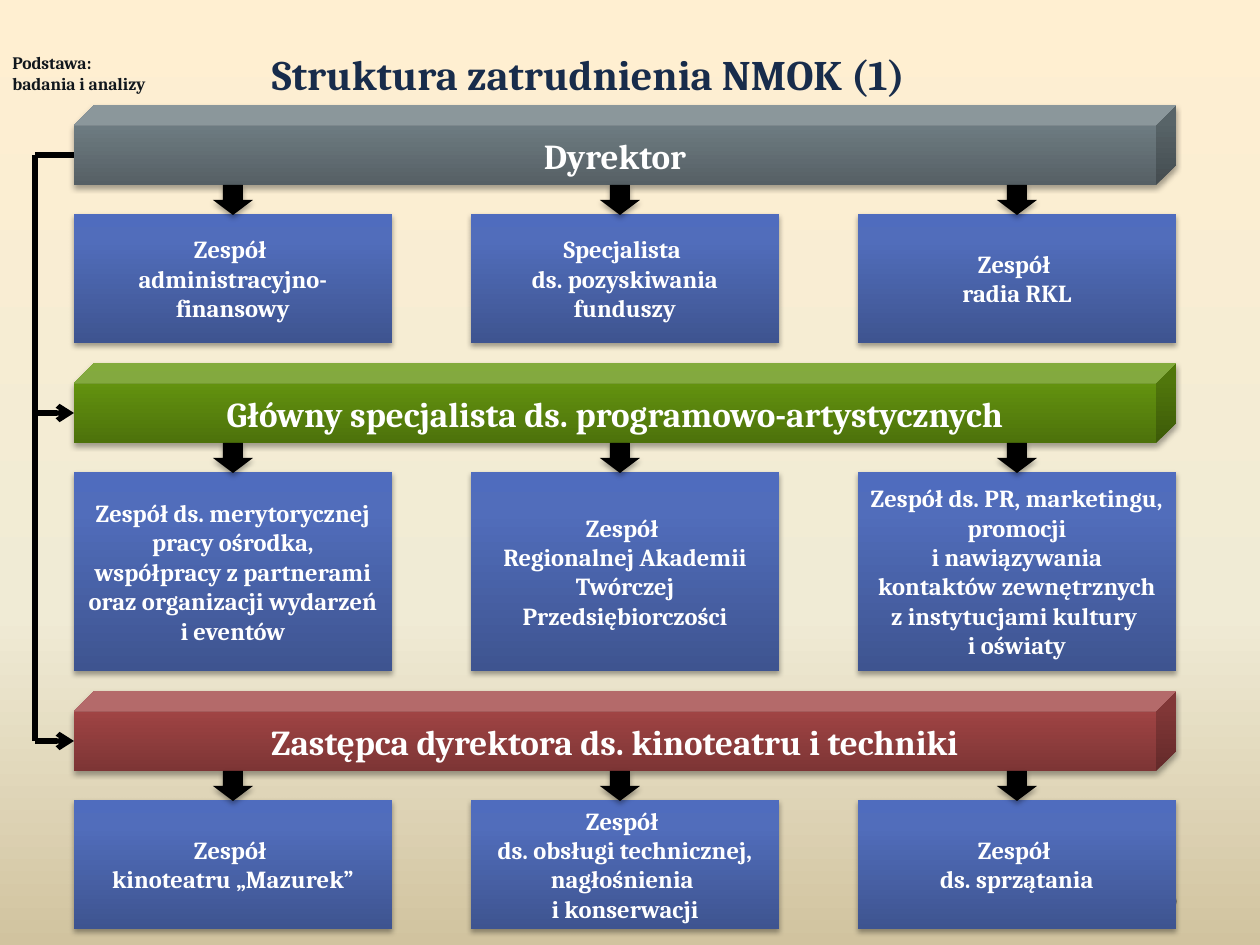
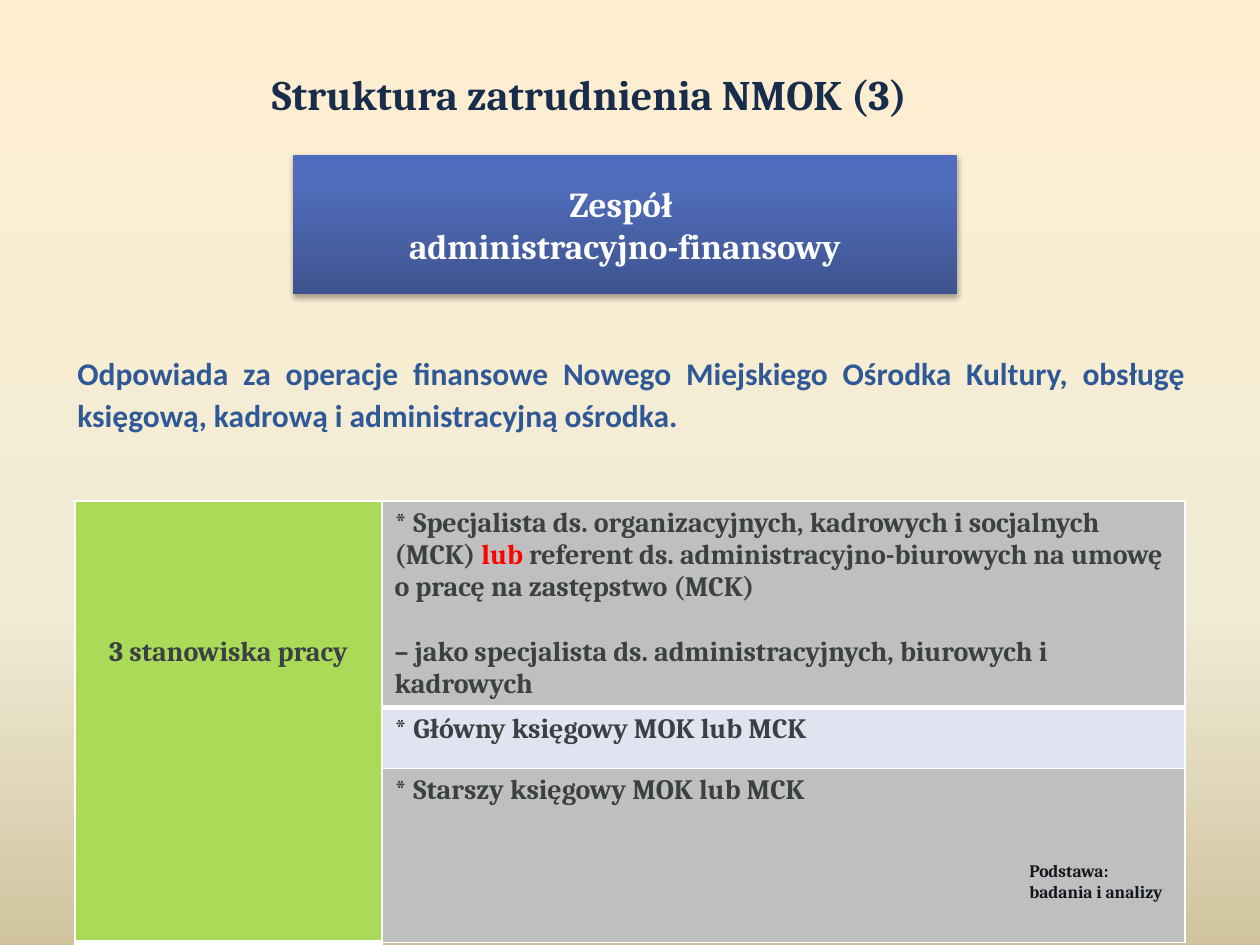
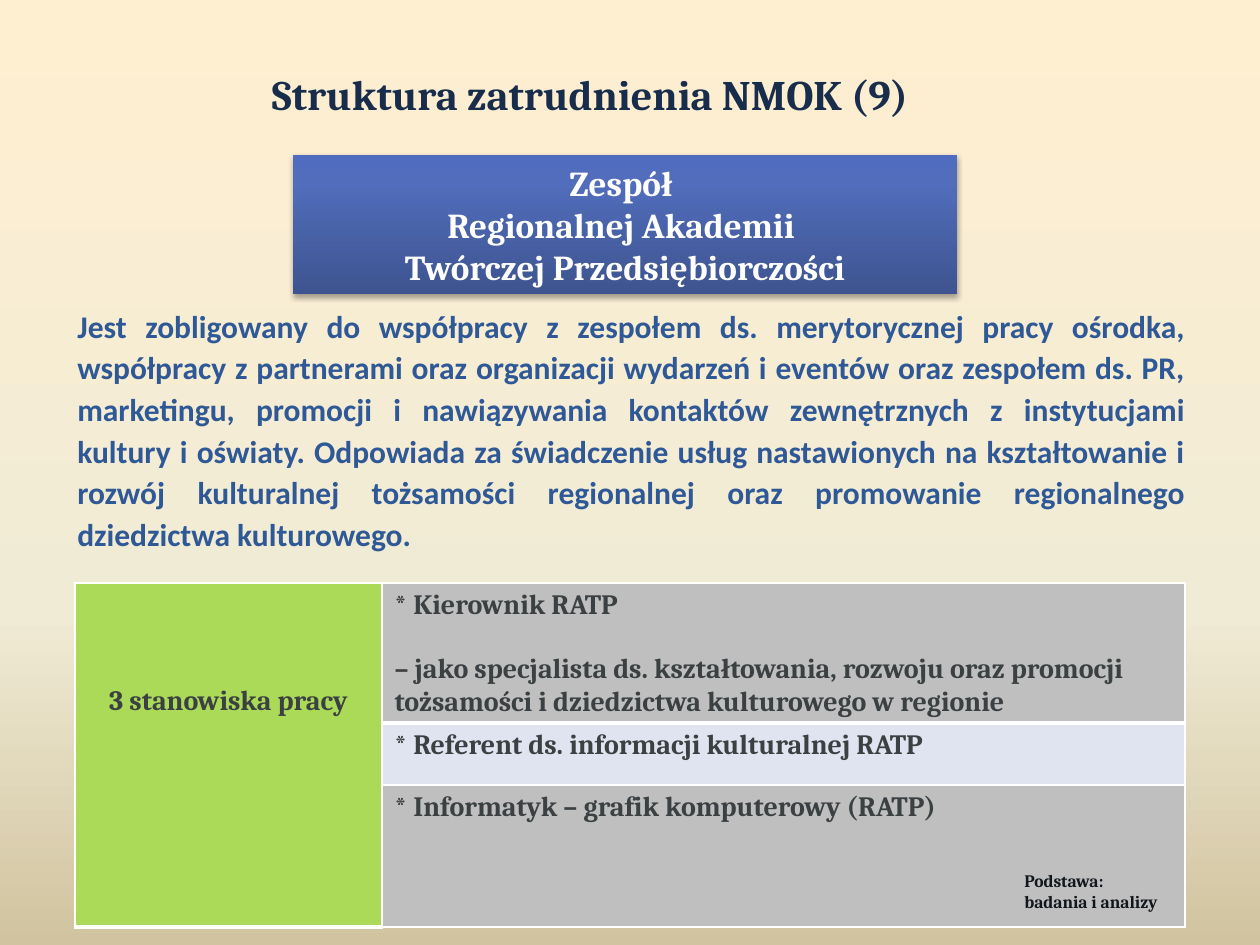
from copy import deepcopy
from dataclasses import dataclass, field

from lxml import etree
from pptx import Presentation, util as u
from pptx.dml.color import RGBColor
from pptx.enum import shapes, text
from pptx.oxml import parse_xml
from pptx.oxml.ns import nsdecls, qn

PX = 914400 / 126


@dataclass
class Theme:
    background: tuple = ((0, "FFEFD1"), (65, "F0EBD5"), (100, "D1C39F"))
    team: tuple = ((0, "3E5490"), (80, "516DBB"), (100, "4F6CBE"))
    director: tuple = ((0, "566065"), (80, "6F7D83"), (100, "6F7E84"))
    programme: tuple = ((0, "4D720B"), (80, "64940F"), (100, "65970C"))
    deputy: tuple = ((0, "7D3535"), (80, "A24545"), (100, "A44343"))
    black: str = "000000"
    white: str = "FFFFFF"
    dot: str = "808080"
    accent: str = "FF0000"
    count_fill: str = "ABD958"
    post_fills: tuple = ("BFBFBF", "DFE4F0", "BFBFBF")
    styles: dict = field(default_factory=lambda: {
        "title": ("182C4B", {"name": "Cambria", "size": u.Pt(24), "bold": True}),
        "bar": ("FFFFFF", {"name": "Cambria", "size": u.Pt(20), "bold": True}),
        "team": ("FFFFFF", {"name": "Cambria", "size": u.Pt(14), "bold": True}),
        "basis": ("11171D", {"name": "Cambria", "size": u.Pt(10), "bold": True}),
        "duty": ("2F5897", {"name": "Calibri", "size": u.Pt(18), "bold": True}),
        "post": ("3B4042", {"name": "Cambria", "size": u.Pt(16), "bold": True}),
    })


theme = Theme()


def write(paragraph, words, style, align=text.PP_ALIGN.LEFT):
    colour, formats = theme.styles[style]
    paragraph.alignment = align
    for row, line in enumerate(words.split("\n")):
        if row:
            paragraph.add_line_break()
            line_break = paragraph._p[-1]
        for order, piece in enumerate(line.split("|")):
            run = paragraph.add_run()
            run.text = piece
            for name, value in formats.items():
                setattr(run.font, name, value)
            run.font.color.rgb = RGBColor.from_string(theme.accent if order % 2 else colour)
            if row and not order:
                line_break.append(deepcopy(run._r.rPr))


def paint(fill, element, stops, angle):
    fill.gradient()
    fill.gradient_angle = angle
    stop_list = next(element.iter(qn("a:gsLst")))
    for stop in list(stop_list):
        stop_list.remove(stop)
    for position, colour in stops:
        stop = etree.SubElement(stop_list, qn("a:gs"), pos=str(position * 1000))
        etree.SubElement(stop, qn("a:srgbClr"), val=colour)


deck = Presentation()
deck.slide_width, deck.slide_height = u.Inches(10), u.Inches(7.5)
master = deck.slide_master
paint(master.background.fill, master.element, theme.background, 270)

BASIS = "Podstawa: \nbadania i analizy"
CUBE = shapes.MSO_SHAPE.CUBE
RECTANGLE = shapes.MSO_SHAPE.RECTANGLE
ARROW = shapes.MSO_SHAPE.DOWN_ARROW

columns = [(74, 318, 213), (471, 308, 600), (858, 318, 997)]
levels = [
    (105, 129, "Dyrektor", theme.director, [
        "Zespół \nadministracyjno-finansowy",
        "Specjalista \nds. pozyskiwania funduszy",
        "Zespół \nradia RKL",
    ]),
    (363, 199, "Główny specjalista ds. programowo-artystycznych", theme.programme, [
        "Zespół ds. merytorycznej pracy ośrodka, współpracy z partnerami oraz organizacji wydarzeń i eventów",
        "Zespół \nRegionalnej Akademii Twórczej Przedsiębiorczości",
        "Zespół ds. PR, marketingu, promocji\ni nawiązywania kontaktów zewnętrznych z instytucjami kultury \ni oświaty",
    ]),
    (691, 129, "Zastępca dyrektora ds. kinoteatru i techniki", theme.deputy, [
        "Zespół \nkinoteatru „Mazurek”",
        "Zespół \nds. obsługi technicznej, nagłośnienia \ni konserwacji",
        "Zespół \nds. sprzątania",
    ]),
]

chart_blocks = []
for top, height, role, stops, teams in levels:
    chart_blocks.append((CUBE, (74, top, 1102, 80), stops, role, "bar"))
    for (left, width, arrow_left), team in zip(columns, teams):
        chart_blocks.append((RECTANGLE, (left, top + 109, width, height), theme.team, team, "team"))
        chart_blocks.append((ARROW, (arrow_left, top + 80, 40, 30), None, "", "team"))

pages = [
    {"number": 1, "title_bottom": 105, "basis": (0, 46), "blocks": chart_blocks},
    {
        "number": 3, "title_bottom": 125, "basis": (1017, 854),
        "blocks": [(RECTANGLE, (293, 155, 664, 139), theme.team,
                    "Zespół \nadministracyjno-finansowy", "bar")],
        "duty_top": 344,
        "duty": "Odpowiada za operacje finansowe Nowego Miejskiego Ośrodka Kultury, obsługę księgową, kadrową i administracyjną ośrodka.",
        "table_top": 501, "rows": (205, 61, 174), "count_margin": 135,
        "posts": [
            ["* Specjalista ds. organizacyjnych, kadrowych i socjalnych (MCK) |lub| referent ds. administracyjno-biurowych na umowę o pracę na zastępstwo (MCK)",
             "– jako specjalista ds. administracyjnych, biurowych i kadrowych"],
            ["* Główny księgowy MOK lub MCK"],
            ["* Starszy księgowy MOK lub MCK"],
        ],
    },
    {
        "number": 9, "title_bottom": 125, "basis": (1012, 864),
        "blocks": [(RECTANGLE, (293, 155, 664, 139), theme.team,
                    "Zespół \nRegionalnej Akademii \nTwórczej Przedsiębiorczości", "bar")],
        "duty_top": 297,
        "duty": "Jest zobligowany do współpracy z zespołem ds. merytorycznej pracy ośrodka, współpracy z partnerami oraz organizacji wydarzeń i eventów oraz zespołem ds. PR, marketingu, promocji i nawiązywania kontaktów zewnętrznych z instytucjami kultury i oświaty. Odpowiada za świadczenie usług nastawionych na kształtowanie i rozwój kulturalnej tożsamości regionalnej oraz promowanie regionalnego dziedzictwa kulturowego.",
        "table_top": 583, "rows": (140, 62, 142), "count_margin": 102,
        "posts": [
            ["* Kierownik RATP",
             "– jako specjalista ds. kształtowania, rozwoju oraz promocji tożsamości i dziedzictwa kulturowego w regionie"],
            ["* Referent ds. informacji kulturalnej RATP"],
            ["* Informatyk – grafik komputerowy (RATP)"],
        ],
    },
]

for page in pages:
    slide = deck.slides.add_slide(deck.slide_layouts[5])
    title = slide.shapes.title
    title_box = (74, page["title_bottom"] - 105, 1134, 105)
    for name, value in zip(("left", "top", "width", "height"), title_box):
        setattr(title, name, round(value * PX))
    title_format = {
        "auto_size": text.MSO_AUTO_SIZE.NONE,
        "vertical_anchor": text.MSO_ANCHOR.BOTTOM,
        "margin_left": round(198 * PX),
    }
    for name, value in title_format.items():
        setattr(title.text_frame, name, value)
    heading = title.text_frame.paragraphs[0]
    heading.line_spacing = u.Pt(58)
    write(heading, f"Struktura zatrudnienia NMOK ({page['number']})", "title")

    for kind, box, stops, words, style in page["blocks"]:
        block = slide.shapes.add_shape(kind, *[round(value * PX) for value in box])
        block.line.fill.background()
        if stops:
            paint(block.fill, block._element, stops, 90)
        else:
            block.fill.solid()
            block.fill.fore_color.rgb = RGBColor.from_string(theme.black)
        block.shadow.inherit = False
        block._element.spPr.find(qn("a:effectLst")).append(parse_xml(
            f'<a:outerShdw {nsdecls("a")} blurRad="39370" dist="22860" dir="5400000" rotWithShape="0">'
            f'<a:srgbClr val="{theme.black}"><a:alpha val="35000"/></a:srgbClr></a:outerShdw>'))
        if words:
            write(block.text_frame.paragraphs[0], words, style, text.PP_ALIGN.CENTER)

    if "posts" in page:
        duty = slide.shapes.add_textbox(*[round(value * PX) for value in (65, page["duty_top"], 1133, 140)])
        duty.text_frame.word_wrap = True
        duty_line = duty.text_frame.paragraphs[0]
        duty_line.line_spacing = 1.1
        write(duty_line, page["duty"], "duty", text.PP_ALIGN.JUSTIFY)

        table_box = (75, page["table_top"], 1110, sum(page["rows"]))
        table = slide.shapes.add_table(3, 2, *[round(value * PX) for value in table_box]).table
        table.first_row = table.horz_banding = False
        for column, width in zip(table.columns, (307, 803)):
            column.width = round(width * PX)
        for row, height in zip(table.rows, page["rows"]):
            row.height = round(height * PX)

        count = table.cell(0, 0)
        count.merge(table.cell(2, 0))
        count.margin_top = round(page["count_margin"] * PX)
        write(count.text_frame.paragraphs[0], "3 stanowiska pracy", "post", text.PP_ALIGN.CENTER)
        cells = [(count, theme.count_fill, 1, 3)]
        for index, (post, colour) in enumerate(zip(page["posts"], theme.post_fills)):
            cell = table.cell(index, 1)
            cells.append((cell, colour, 3 if index == 1 else 1, 3 if index == 0 else 1))
            for order, words in enumerate(post):
                line = cell.text_frame.add_paragraph() if order else cell.text_frame.paragraphs[0]
                if order:
                    line.space_before = u.Pt(18.4)
                write(line, words, "post")
        for cell, colour, upper, lower in cells:
            cell.margin_bottom = 0
            cell.fill.solid()
            cell.fill.fore_color.rgb = RGBColor.from_string(colour)
            borders = (("L", 1), ("R", 1), ("T", upper), ("B", lower))
            for order, (side, weight) in enumerate(borders):
                cell._tc.tcPr.insert(order, parse_xml(
                    f'<a:ln{side} {nsdecls("a")} w="{weight * 12700}"><a:solidFill>'
                    f'<a:srgbClr val="{theme.white}"/></a:solidFill></a:ln{side}>'))
    else:
        middles = [level[0] + 50 for level in levels]
        routes = [(74, middles[0], 35, middles[0], False), (35, middles[0], 35, middles[-1], False)]
        routes += [(35, middle, 74, middle, True) for middle in middles[1:]]
        for *ends, pointed in routes:
            route = slide.shapes.add_connector(
                shapes.MSO_CONNECTOR.STRAIGHT, *[round(value * PX) for value in ends])
            route.line.width = u.Pt(3)
            route.line.color.rgb = RGBColor.from_string(theme.black)
            if pointed:
                etree.SubElement(route.line._get_or_add_ln(), qn("a:tailEnd"), type="arrow")
            etree.SubElement(route._element.spPr, qn("a:effectLst"))

    basis = slide.shapes.add_textbox(*[round(value * PX) for value in (*page["basis"], 194, 55)])
    basis.text_frame.word_wrap = True
    write(basis.text_frame.paragraphs[0], BASIS, "basis")

footer_dot = slide.shapes.add_shape(
    shapes.MSO_SHAPE.OVAL, *[round(value * PX) for value in (1166, 896, 11, 11)])
footer_dot.fill.solid()
footer_dot.fill.fore_color.rgb = RGBColor.from_string(theme.dot)
footer_dot.line.fill.background()
footer_dot.shadow.inherit = False
master.element.cSld.spTree.append(footer_dot._element)

deck.save("out.pptx")
